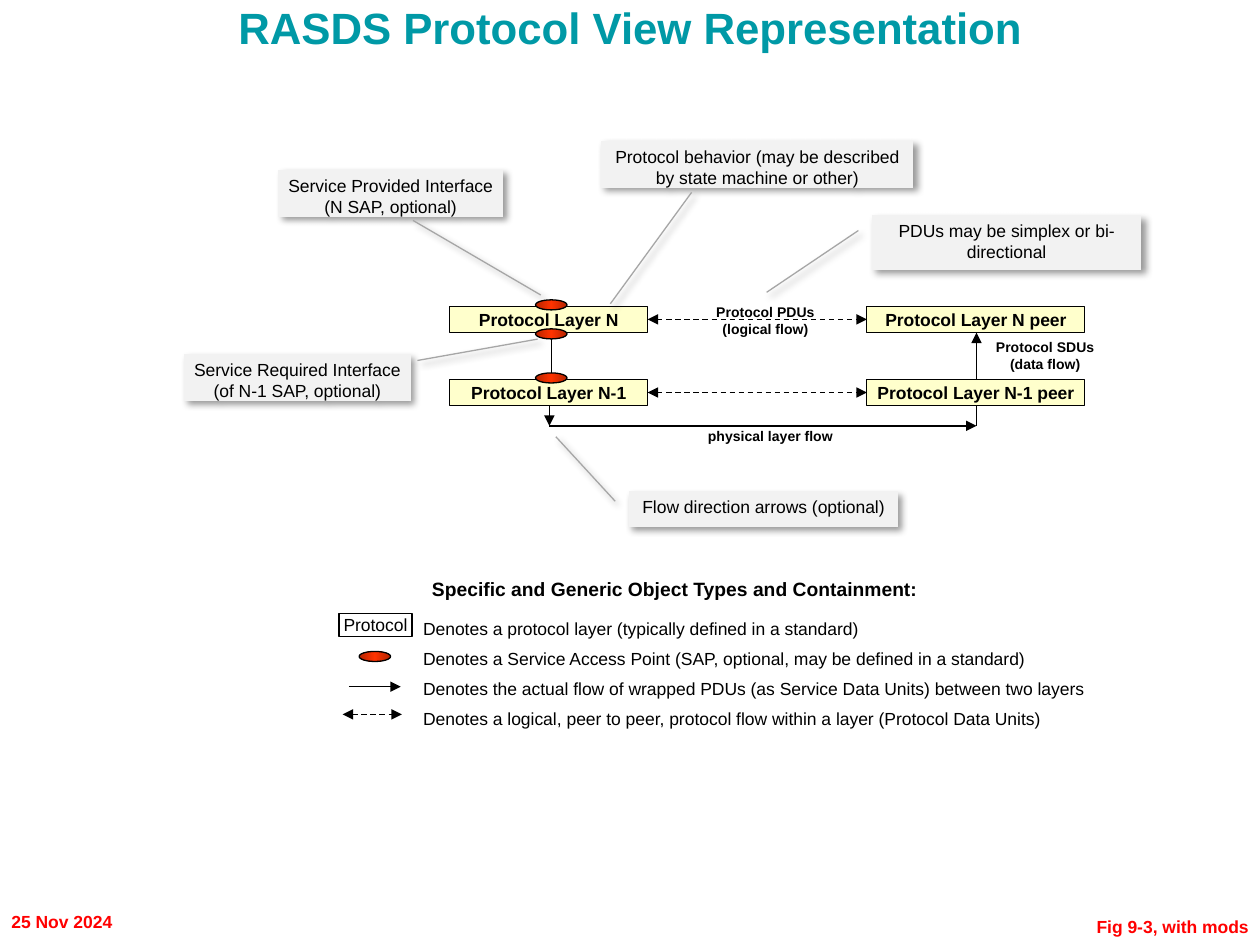
from copy import deepcopy
from pptx import Presentation
from pptx.dml.color import RGBColor
from pptx.enum.dml import MSO_LINE
from pptx.enum.shapes import MSO_CONNECTOR, MSO_SHAPE
from pptx.enum.text import MSO_ANCHOR, PP_ALIGN
from pptx.oxml import parse_xml
from pptx.oxml.ns import nsdecls, qn
from pptx.util import Inches, Pt

LEFT, MID, RIGHT = PP_ALIGN.LEFT, PP_ALIGN.CENTER, PP_ALIGN.RIGHT
BLACK, RED, TEAL = "000000", "FF0000", "0099A6"

# Protocol grid: (left, width) of each stack, top of each layer
COLS = [(3.57, 1.57), (6.88, 1.73)]
ROWS = [2.43, 3.01]
BOX_H = 0.21
LAYERS = [["Protocol Layer N", "Protocol Layer N peer"],
          ["Protocol Layer N-1", "Protocol Layer N-1 peer"]]
SAP_X, SAP_W, SAP_H = 4.25, 0.25, 0.08
SAP_TOPS = [2.38, 2.61, 2.96]
DOWN_X, UP_X, FLOW_Y = 4.36, 7.75, 3.38

# Callouts: text, box, pointer as shares of the box (y, x, y, x)
NOTES = [
    ("PDUs may be simplex or bi-directional",
     (6.92, 1.71, 2.14, 0.43), (0.28, 1.05, 1.42, 1.39)),
    ("Protocol behavior (may be described by state machine or other)",
     (4.77, 1.12, 2.48, 0.37), (1.1, 0.71, 3.49, 0.97)),
    ("Service Provided Interface (N SAP, optional)",
     (2.21, 1.35, 1.78, 0.37), (1.08, 0.4, 2.68, -0.17)),
    ("Service Required Interface (of N-1 SAP, optional)",
     (1.46, 2.81, 1.8, 0.37), (0.14, -0.03, -0.32, -0.56)),
    ("Flow direction arrows (optional)",
     (4.99, 3.9, 2.14, 0.28), (0.28, 1.05, -1.55, 1.27)),
]

# Labels: lines, box, size, colour, alignment, insets, anchor
TOP, CTR = MSO_ANCHOR.TOP, MSO_ANCHOR.MIDDLE
LABELS = [
    (["Protocol PDUs", "(logical flow)"], (5.68, 2.41, 0.79, 0.27), 8, BLACK, MID, (0, 0), TOP),
    (["Protocol SDUs", "(data flow)"], (7.9, 2.69, 0.79, 0.27), 8, BLACK, MID, (0, 0), TOP),
    (["physical layer flow"], (5.52, 3.34, 1.21, 0.24), 8, BLACK, LEFT, (0.1, 0.05), TOP),
    (["Specific and Generic Object Types and Containment:"],
     (3.33, 4.53, 4.09, 0.29), 11, BLACK, LEFT, (0.1, 0.05), TOP),
    (["25 Nov 2024"], (0, 7.17, 1.89, 0.29), 10, RED, LEFT, (0.09, 0.05), CTR),
    (["Fig 9-3, with mods"], (8.11, 7.21, 1.89, 0.29), 10, RED, RIGHT, (0.09, 0.05), CTR),
]
LEGEND = [
    "Denotes a protocol layer (typically defined in a standard)",
    "Denotes a Service Access Point (SAP, optional, may be defined in a standard)",
    "Denotes the actual flow of wrapped PDUs (as Service Data Units) between two layers",
    "Denotes a logical, peer to peer, protocol flow within a layer (Protocol Data Units)",
]

deck = Presentation()
deck.slide_width, deck.slide_height = Inches(10), Inches(7.5)
slide = deck.slides.add_slide(deck.slide_layouts[5])
shapes = slide.shapes


def color(code):
    return RGBColor.from_string(code)


def inch(box):
    return [Inches(n) for n in box]


def write(frame, lines, size=10, code=BLACK, bold=False, align=MID,
          pad=(0.02, 0.02), anchor=TOP, wrap=True, space=None):
    frame.word_wrap, frame.vertical_anchor = wrap, anchor
    frame.margin_left = frame.margin_right = Inches(pad[0])
    frame.margin_top = frame.margin_bottom = Inches(pad[1])
    for i, line in enumerate(lines):
        para = frame.add_paragraph() if i else frame.paragraphs[0]
        para.alignment = align
        if space:
            para.line_spacing = space
        run = para.add_run()
        run.text = line
        font = run.font
        font.name, font.size, font.bold = "Arial", Pt(size), bold
        font.color.rgb = color(code)


def draw(kind, box, fill, edge=BLACK):
    shape = shapes.add_shape(kind, *inch(box))
    shape.shadow.inherit = False
    shape.fill.solid()
    shape.fill.fore_color.rgb = color(fill)
    shape.line.color.rgb = color(edge)
    shape.line.width = Pt(0.75)
    return shape


def sap(x, y):
    fill = draw(MSO_SHAPE.OVAL, (x, y, SAP_W, SAP_H), "FF3300").fill
    fill.gradient()
    fill.gradient_angle = 0
    stops = shapes[-1]._element.spPr.find(".//" + qn("a:gsLst"))
    stops.append(deepcopy(stops[0]))
    for i, code in enumerate(["B62400", "FF3300", "B62400"]):
        fill.gradient_stops[i].position = i / 2
        fill.gradient_stops[i].color.rgb = color(code)


def wire(x1, y1, x2, y2, ends=(), dash=False):
    link = shapes.add_connector(MSO_CONNECTOR.STRAIGHT, *inch((x1, y1, x2, y2)))
    link.line.color.rgb = color(BLACK)
    link.line.width = Pt(0.75)
    if dash:
        link.line.dash_style = MSO_LINE.DASH
    props = link._element.spPr
    for end in ends:
        props.find(qn("a:ln")).append(
            parse_xml(f'<a:{end}End {nsdecls("a")} type="triangle"/>'))
    props.append(parse_xml(f'<a:effectLst {nsdecls("a")}/>'))


def note(text, box, tip):
    shape = draw(MSO_SHAPE.LINE_CALLOUT_1_NO_BORDER, box, "F2F2F2", "A6A6A6")
    for i, share in enumerate(tip):
        shape.adjustments[i] = share
    props = shape._element.spPr
    props.find(qn("a:xfrm")).set("flipH", "1")
    props.find(qn("a:effectLst")).append(parse_xml(
        f'<a:outerShdw {nsdecls("a")} blurRad="{Pt(4)}" dist="{Pt(3)}" dir="2700000"'
        ' algn="tl" rotWithShape="0"><a:srgbClr val="000000">'
        '<a:alpha val="40000"/></a:srgbClr></a:outerShdw>'))
    write(shape.text_frame, [text], pad=(0.04, 0.04))


# Title
title = shapes.title
title.left, title.top, title.width, title.height = inch((0.5, 0, 9, 1.25))
write(title.text_frame, ["RASDS Protocol View Representation"], 25, TEAL, True,
      pad=(0.1, 0.05), space=0.9)

# Layers and the logical flow between peers
BOTH = ("head", "tail")
for y, names in zip(ROWS, LAYERS):
    for (x, w), name in zip(COLS, names):
        box = draw(MSO_SHAPE.RECTANGLE, (x, y, w, BOX_H), "FFFFCC")
        write(box.text_frame, [name], bold=True)
    wire(sum(COLS[0]), y + BOX_H / 2, COLS[1][0], y + BOX_H / 2, BOTH, True)

# Callouts and service access points
for item in NOTES:
    note(*item)
for y in SAP_TOPS:
    sap(SAP_X, y)

# Actual flow
mid = SAP_X + SAP_W / 2
wire(mid, SAP_TOPS[1] + SAP_H, mid, SAP_TOPS[2])
wire(DOWN_X, FLOW_Y, DOWN_X, ROWS[1] + BOX_H, ["head"])
wire(UP_X, FLOW_Y, UP_X, ROWS[1] + BOX_H)
wire(UP_X, ROWS[1], UP_X, ROWS[0] + BOX_H, ["tail"])
wire(DOWN_X, FLOW_Y, UP_X, FLOW_Y, ["tail"])

# Labels
for lines, box, size, code, align, pad, anchor in LABELS:
    label = shapes.add_textbox(*inch(box))
    write(label.text_frame, lines, size, code, True, align, pad, anchor, False)

# Legend
legend = shapes.add_textbox(*inch((3.26, 4.79, 5.73, 1.03)))
write(legend.text_frame, LEGEND, align=LEFT, pad=(0.1, 0.05), space=Pt(17))
key = draw(MSO_SHAPE.RECTANGLE, (2.69, 4.87, 0.58, 0.18), "FFFFFF")
write(key.text_frame, ["Protocol"], pad=(0, 0.05), anchor=CTR)
sap(2.85, 5.17)
wire(2.77, 5.45, 3.18, 5.45, ["tail"])
wire(2.72, 5.67, 3.19, 5.67, BOTH, True)

deck.save("out.pptx")
